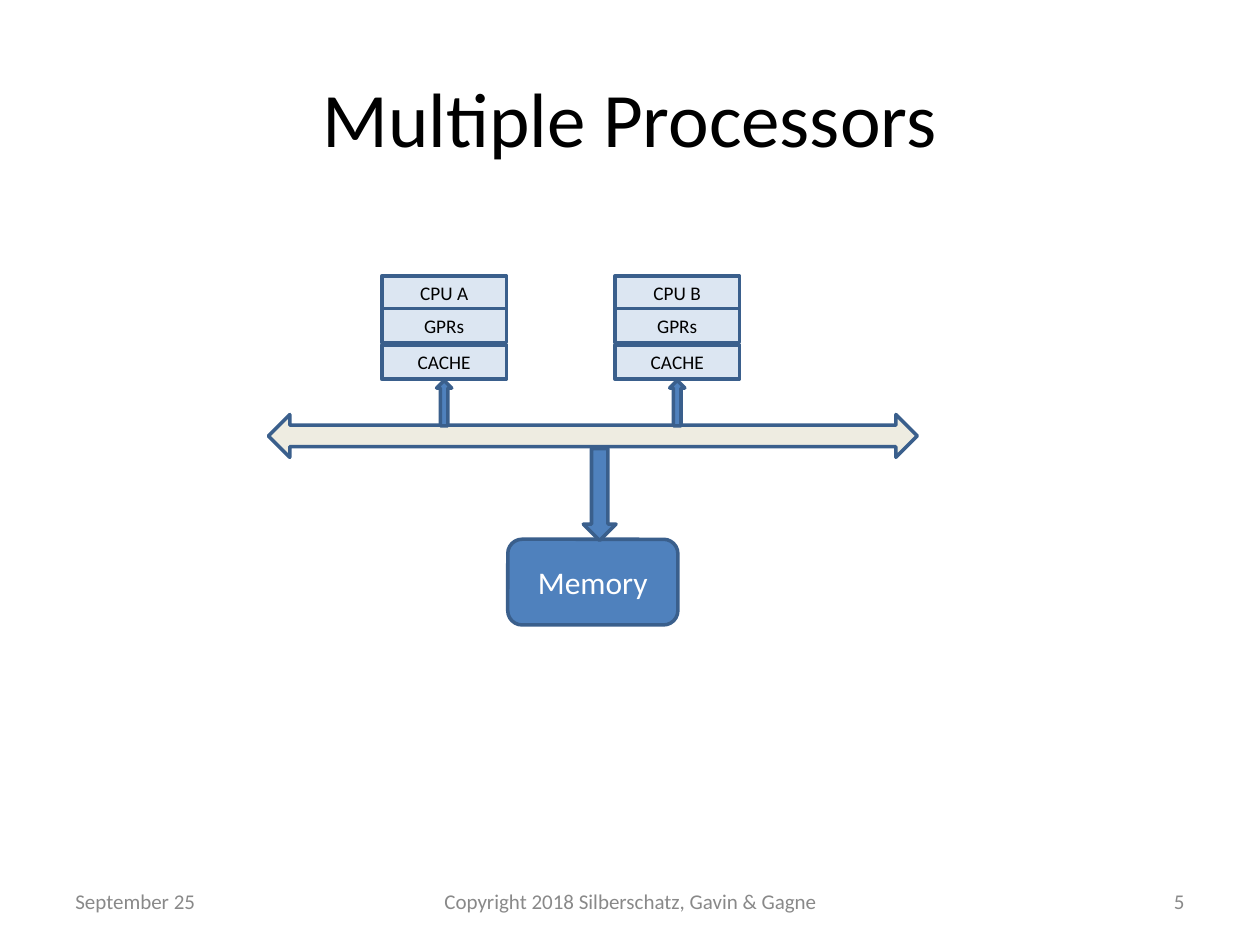
from pptx import Presentation
from pptx import util as u
from pptx.dml.color import RGBColor
from pptx.enum import shapes, text

WIDTH, HEIGHT = 10, 7.5
MARGIN = 0.5
INK, GREY, WHITE = "000000", "898989", "FFFFFF"
BLUE, PALE, SAND, EDGE = "4F81BD", "DCE6F2", "EEECE1", "3A5F8C"
SHAPE, ALIGN = shapes.MSO_SHAPE, text.PP_ALIGN

TITLE = "Multiple Processors"
FOOTERS = [
    ("September 25", MARGIN, 2.33, ALIGN.LEFT),
    ("Copyright 2018 Silberschatz, Gavin & Gagne", 3.42, 3.17, ALIGN.CENTER),
    ("5", WIDTH - MARGIN - 2.33, 2.33, ALIGN.RIGHT),
]
PROCESSORS = [
    ("CPU A", "GPRs", "CACHE"),
    ("CPU B", "GPRs", "CACHE"),
]
CPU_LEFT, CPU_PITCH = 3.03, 1.85
CELL_WIDTH, CELL_HEIGHT = 0.99, 0.27
ROW_TOPS = (2.19, 2.45, 2.74)
LINK_TOP, LINK_WIDTH, LINK_HEIGHT = 3.02, 0.12, 0.36
BUS = (2.13, 3.29, 5.15, 0.34)
MEMORY = (4.03, 4.28, 1.35, 0.68)
MEMORY_LINK = (4.63, 3.56, 0.26, 0.73)


def color(value):
    """Turn a hex string into a colour."""
    return RGBColor.from_string(value)


def write(shape, words, size, ink, align=ALIGN.CENTER):
    """Set one line of vertically centred text in a shape."""
    frame = shape.text_frame
    frame.word_wrap = True
    frame.vertical_anchor = text.MSO_ANCHOR.MIDDLE
    paragraph = frame.paragraphs[0]
    paragraph.alignment = align
    run = paragraph.add_run()
    run.text = words
    for name, value in {"name": "Calibri", "size": u.Pt(size)}.items():
        setattr(run.font, name, value)
    run.font.color.rgb = color(ink)


def add_label(slide, box, *content):
    """Add a text box at a place given in inches."""
    write(slide.shapes.add_textbox(*map(u.Inches, box)), *content)


def add_block(slide, kind, box, fill):
    """Add an outlined preset shape at a place given in inches."""
    shape = slide.shapes.add_shape(kind, *map(u.Inches, box))
    shape.shadow.inherit = False
    shape.fill.solid()
    shape.fill.fore_color.rgb = color(fill)
    shape.line.color.rgb = color(EDGE)
    shape.line.width = u.Pt(2)
    return shape


def add_processor(slide, column, rows):
    """Stack the parts of one processor above its link to the bus."""
    left = CPU_LEFT + column * CPU_PITCH
    for words, top in zip(rows, ROW_TOPS):
        cell = add_block(slide, SHAPE.RECTANGLE, (left, top, CELL_WIDTH, CELL_HEIGHT), PALE)
        write(cell, words, 11, INK)
    link_left = left + (CELL_WIDTH - LINK_WIDTH) / 2
    add_block(slide, SHAPE.UP_ARROW, (link_left, LINK_TOP, LINK_WIDTH, LINK_HEIGHT), BLUE)


def main():
    """Build the slide and save it."""
    presentation = Presentation()
    presentation.slide_width, presentation.slide_height = u.Inches(WIDTH), u.Inches(HEIGHT)
    slide = presentation.slides.add_slide(presentation.slide_layouts[6])
    add_label(slide, (MARGIN, 0.3, WIDTH - 2 * MARGIN, 1.25), TITLE, 44, INK)
    for words, left, width, align in FOOTERS:
        add_label(slide, (left, 6.95, width, 0.4), words, 12, GREY, align)
    add_block(slide, SHAPE.LEFT_RIGHT_ARROW, BUS, SAND)
    for column, rows in enumerate(PROCESSORS):
        add_processor(slide, column, rows)
    memory = add_block(slide, SHAPE.ROUNDED_RECTANGLE, MEMORY, BLUE)
    write(memory, "Memory", 18, WHITE)
    add_block(slide, SHAPE.DOWN_ARROW, MEMORY_LINK, BLUE)
    presentation.save("out.pptx")


if __name__ == "__main__":
    main()
